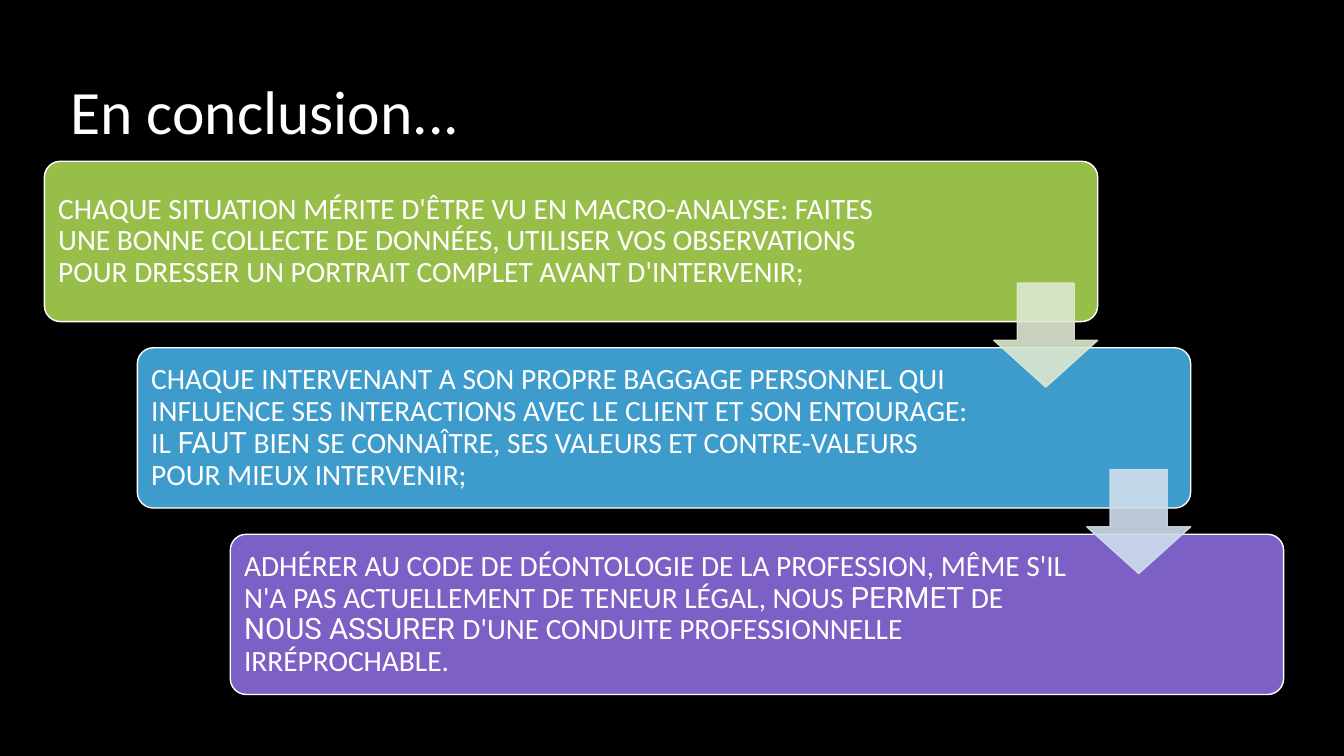
from lxml import etree
from pptx import Presentation
from pptx.dml.color import RGBColor
from pptx.enum.shapes import MSO_SHAPE
from pptx.enum.text import MSO_ANCHOR, MSO_AUTO_SIZE, PP_ALIGN
from pptx.oxml.ns import qn
from pptx.util import Pt

ROUNDED = MSO_SHAPE.ROUNDED_RECTANGLE
DOWN_ARROW = MSO_SHAPE.DOWN_ARROW
MIDDLE = MSO_ANCHOR.MIDDLE
LEFT = PP_ALIGN.LEFT
NO_AUTOFIT = MSO_AUTO_SIZE.NONE

BODY_FONT = "Calibri"
ACCENT_FONT = "Roboto"
WHITE = "FFFFFF"
BLACK = "000000"

TITLE = "En conclusion..."
STEPS = [
    {
        "fill": "97BE49",
        "text_width": 628.6,
        "runs": [
            ("CHAQUE SITUATION MÉRITE D'ÊTRE VU EN MACRO-ANALYSE: FAITES UNE BONNE "
             "COLLECTE DE DONNÉES, UTILISER VOS OBSERVATIONS POUR DRESSER UN PORTRAIT "
             "COMPLET AVANT D'INTERVENIR;", BODY_FONT),
        ],
    },
    {
        "fill": "3D9CCC",
        "text_width": 604.8,
        "runs": [
            ("CHAQUE INTERVENANT A SON PROPRE BAGGAGE PERSONNEL QUI INFLUENCE SES "
             "INTERACTIONS AVEC LE CLIENT ET SON ENTOURAGE: IL ", BODY_FONT),
            ("FAUT", ACCENT_FONT),
            (" BIEN SE CONNAÎTRE, SES VALEURS ET CONTRE-VALEURS POUR MIEUX "
             "INTERVENIR;", BODY_FONT),
        ],
    },
    {
        "fill": "7C60C6",
        "text_width": 604.8,
        "runs": [
            ("ADHÉRER AU CODE DE DÉONTOLOGIE DE LA PROFESSION, MÊME S'IL N'A PAS "
             "ACTUELLEMENT DE TENEUR LÉGAL, NOUS ", BODY_FONT),
            ("PERMET", ACCENT_FONT),
            (" DE ", BODY_FONT),
            ("NOUS ASSURER ", ACCENT_FONT),
            ("D'UNE CONDUITE PROFESSIONNELLE IRRÉPROCHABLE.", BODY_FONT),
        ],
    },
]
ARROW_COLORS = ["DDE8D0", "CEDEEC"]

SLIDE_SIZE = (960, 540)
TITLE_BOX = (43.2, 43.2, 575.3, 77.8)
BOX_LEFT, BOX_TOP, BOX_WIDTH, BOX_HEIGHT = 31.7, 115.2, 752.4, 114.5
STEP_X, STEP_Y = 66.4, 133.2
TEXT_PADDING = 3.4
ARROW_LEFT, ARROW_TOP, ARROW_SIZE = 709.9, 202.3, 74.2
INSET = 6.5


def color(value):
    return RGBColor.from_string(value)


def points(*values):
    return [Pt(value) for value in values]


def set_values(target, values):
    for name, value in values.items():
        setattr(target, name, value)


def add_panel(slide, kind, box, fill, line, adjustments, opacity=None):
    shape = slide.shapes.add_shape(kind, *points(*box))
    shape.shadow.inherit = False
    for index, value in enumerate(adjustments):
        shape.adjustments[index] = value
    shape.fill.solid()
    shape.fill.fore_color.rgb = color(fill)
    shape.line.color.rgb = color(line)
    shape.line.width = Pt(1)
    if opacity is not None:
        for element in shape.element.spPr.iter(qn("a:srgbClr")):
            alpha = etree.SubElement(element, qn("a:alpha"))
            alpha.set("val", str(opacity * 1000))


def write_runs(text_frame, runs, size, space_after, frame_values):
    set_values(text_frame, {"word_wrap": True, "auto_size": NO_AUTOFIT,
                            "vertical_anchor": MIDDLE, **frame_values})
    paragraph = text_frame.paragraphs[0]
    set_values(paragraph, {"alignment": LEFT, "line_spacing": 0.9,
                           "space_after": Pt(space_after)})
    for text, font_name in runs:
        run = paragraph.add_run()
        run.text = text
        set_values(run.font, {"name": font_name, "size": Pt(size)})
        run.font.color.rgb = color(WHITE)


def add_title(slide):
    title = slide.shapes.title
    left, top, width, height = points(*TITLE_BOX)
    set_values(title, {"left": left, "top": top, "width": width, "height": height})
    write_runs(title.text_frame, [(TITLE, BODY_FONT)], 44, 0, {})


def add_step(slide, index, step):
    left = BOX_LEFT + index * STEP_X
    top = BOX_TOP + index * STEP_Y
    add_panel(slide, ROUNDED, (left, top, BOX_WIDTH, BOX_HEIGHT),
              step["fill"], WHITE, [0.1])
    text_box = slide.shapes.add_textbox(*points(
        left + TEXT_PADDING, top + TEXT_PADDING,
        step["text_width"], BOX_HEIGHT - 2 * TEXT_PADDING))
    sides = ("left", "top", "right", "bottom")
    margins = {f"margin_{side}": Pt(INSET) for side in sides}
    write_runs(text_box.text_frame, step["runs"], 21, 7.35, margins)


def add_arrow(slide, index, fill):
    box = (ARROW_LEFT + index * STEP_X, ARROW_TOP + index * STEP_Y,
           ARROW_SIZE, ARROW_SIZE)
    add_panel(slide, DOWN_ARROW, box, fill, fill, [0.55, 0.45], opacity=90)


def main():
    presentation = Presentation()
    presentation.slide_width, presentation.slide_height = points(*SLIDE_SIZE)
    slide = presentation.slides.add_slide(presentation.slide_layouts[5])
    slide.background.fill.solid()
    slide.background.fill.fore_color.rgb = color(BLACK)
    add_title(slide)
    for index, step in enumerate(STEPS):
        add_step(slide, index, step)
    for index, fill in enumerate(ARROW_COLORS):
        add_arrow(slide, index, fill)
    presentation.save("out.pptx")


if __name__ == "__main__":
    main()
